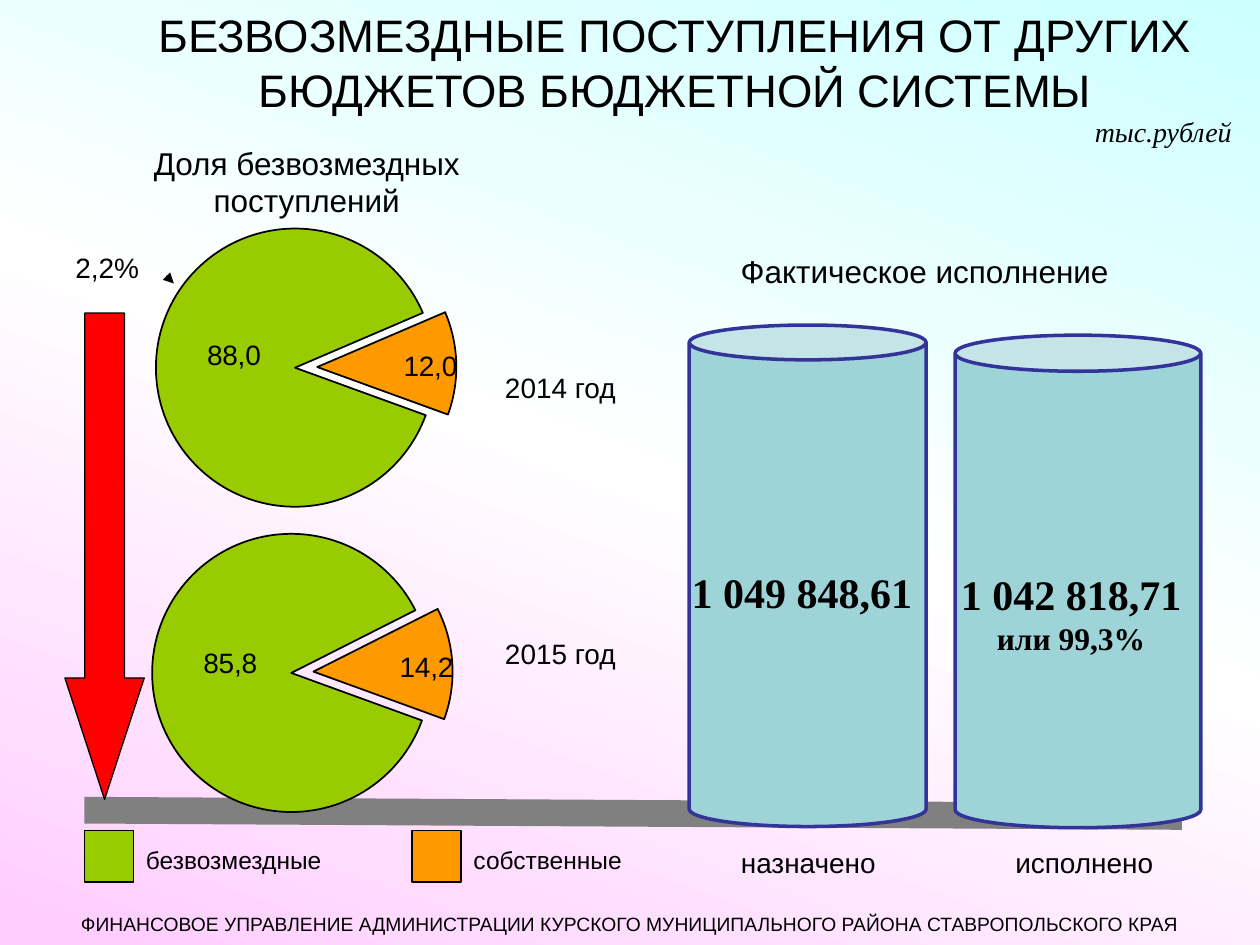
from copy import deepcopy

from lxml import etree
from pptx import Presentation
from pptx.chart.data import CategoryChartData
from pptx.dml.color import RGBColor
from pptx.enum.chart import XL_CHART_TYPE, XL_LABEL_POSITION
from pptx.enum.shapes import MSO_CONNECTOR, MSO_SHAPE
from pptx.enum.text import MSO_ANCHOR, PP_ALIGN
from pptx.oxml import parse_xml
from pptx.oxml.ns import nsdecls, qn
from pptx.util import Inches, Pt

BLACK = RGBColor(0x00, 0x00, 0x00)
GRAY = RGBColor(0x80, 0x80, 0x80)
GREEN = RGBColor(0x99, 0xCC, 0x00)
ORANGE = RGBColor(0xFF, 0x99, 0x00)
RED = RGBColor(0xFF, 0x00, 0x00)
TEAL = RGBColor(0x9E, 0xD3, 0xD7)
NAVY = RGBColor(0x33, 0x33, 0x99)
CYAN = RGBColor(0xCC, 0xFF, 0xFF)
WHITE = RGBColor(0xFF, 0xFF, 0xFF)
PINK = RGBColor(0xFF, 0xCC, 0xFF)

SANS, SERIF = "Arial", "Times New Roman"
LEFT, CENTER = PP_ALIGN.LEFT, PP_ALIGN.CENTER
TOP, MIDDLE = MSO_ANCHOR.TOP, MSO_ANCHOR.MIDDLE
CAN, RECT, ARROW = MSO_SHAPE.CAN, MSO_SHAPE.RECTANGLE, MSO_SHAPE.RIGHT_ARROW
STRAIGHT = MSO_CONNECTOR.STRAIGHT
PIE = XL_CHART_TYPE.PIE
LABEL_SPOTS = (XL_LABEL_POSITION.CENTER, XL_LABEL_POSITION.INSIDE_END)
LABEL_SHIFTS = ((0.02, -0.04), (0.02, 0.01))

PIE_LAYOUT = (
    f'<c:layout {nsdecls("c")}><c:manualLayout><c:layoutTarget val="inner"/>'
    '<c:xMode val="edge"/><c:yMode val="edge"/><c:x val="0.16"/><c:y val="0"/>'
    '<c:w val="0.71"/><c:h val="0.87"/></c:manualLayout></c:layout>'
)


def add_run(p, text, size=16, font=SANS, bold=False, italic=False):
    r = p.add_run()
    r.text = text
    f = r.font
    f.size, f.name, f.bold, f.italic = Pt(size), font, bold, italic
    f.color.rgb = BLACK


def label_layout(dx, dy):
    """Offset of a data label from its spot, as a share of the chart."""
    return parse_xml(f'<c:layout {nsdecls("c")}><c:manualLayout><c:x val="{dx}"/>'
                     f'<c:y val="{dy}"/></c:manualLayout></c:layout>')


class SlideBuilder:
    def __init__(self, slide):
        self.slide = slide

    def background(self, colors, angle):
        """Fill the background with evenly spaced gradient stops."""
        fill = self.slide.background.fill
        fill.gradient()
        fill.gradient_angle = angle
        stops = next(self.slide.element.iter(qn("a:gsLst")))
        stops.insert(1, deepcopy(stops[0]))
        for i, (stop, color) in enumerate(zip(fill.gradient_stops, colors)):
            stop.position = i / (len(colors) - 1)
            stop.color.rgb = color

    def text(self, text, x, y, w, h, align=LEFT, anchor=TOP, extra=None, **fmt):
        """Add a text box; extra is a (text, size) run that follows."""
        box = self.slide.shapes.add_textbox(Inches(x), Inches(y), Inches(w), Inches(h))
        tf = box.text_frame
        tf.word_wrap = True
        tf.vertical_anchor = anchor
        p = tf.paragraphs[0]
        p.alignment = align
        add_run(p, text, **fmt)
        if extra:
            add_run(p, extra[0], **{**fmt, "size": extra[1]})

    def shape(self, kind, x, y, w, h, fill, line=BLACK, weight=0.75, adj=(), rotation=0):
        sp = self.slide.shapes.add_shape(kind, Inches(x), Inches(y), Inches(w), Inches(h))
        sp.shadow.inherit = False
        sp.fill.solid()
        sp.fill.fore_color.rgb = fill
        sp.line.color.rgb = line
        sp.line.width = Pt(weight)
        sp.rotation = rotation
        for i, value in enumerate(adj):
            sp.adjustments[i] = value

    def line(self, x1, y1, x2, y2, color, weight, arrow=False):
        c = self.slide.shapes.add_connector(
            STRAIGHT, Inches(x1), Inches(y1), Inches(x2), Inches(y2))
        c.line.color.rgb = color
        c.line.width = Pt(weight)
        if arrow:
            etree.SubElement(c.line._get_or_add_ln(), qn("a:tailEnd"), type="triangle")
        etree.SubElement(c._element.spPr, qn("a:effectLst"))

    def pie(self, x, y, values, labels):
        data = CategoryChartData()
        data.categories = ["1", "2"]
        data.add_series("Series 1", values)
        chart = self.slide.shapes.add_chart(
            PIE, Inches(x), Inches(y), Inches(3.36), Inches(2.75), data).chart
        chart.has_legend = False
        chart.has_title = False
        chart.font.size, chart.font.name = Pt(9), SANS
        chart.font.color.rgb = BLACK

        plot = chart.plots[0]
        plot.vary_by_categories = True
        plot_area = next(chart.element.iter(qn("c:plotArea")))
        for old in plot_area.findall(qn("c:layout")):
            plot_area.remove(old)
        plot_area.insert(0, parse_xml(PIE_LAYOUT))
        pie = plot_area.find(qn("c:pieChart"))
        for old in pie.findall(qn("c:firstSliceAng")):
            pie.remove(old)
        etree.SubElement(pie, qn("c:firstSliceAng"), val="110")

        series = plot.series[0]
        for i, color in enumerate((GREEN, ORANGE)):
            point = series.points[i]
            point.format.fill.solid()
            point.format.fill.fore_color.rgb = color
            point.format.line.color.rgb = BLACK
            point.format.line.width = Pt(1)
            label = point.data_label
            add_run(label.text_frame.paragraphs[0], labels[i])
            label.position = LABEL_SPOTS[i]
        for d_lbl, shift in zip(series._element.iter(qn("c:dLbl")), LABEL_SHIFTS):
            d_lbl.find(qn("c:idx")).addnext(label_layout(*shift))
        explosion = etree.Element(qn("c:explosion"), val="8")
        series._element.find(qn("c:dPt")).addprevious(explosion)


def main():
    prs = Presentation()
    prs.slide_width, prs.slide_height = Inches(10), Inches(7.5)
    s = SlideBuilder(prs.slides.add_slide(prs.slide_layouts[6]))
    s.background((CYAN, WHITE, PINK), 250)

    s.line(0.67, 6.43, 9.38, 6.48, GRAY, 15.25)
    for x, y, w, h in ((7.58, 2.66, 1.95, 3.91), (5.47, 2.58, 1.88, 3.98)):
        s.shape(CAN, x, y, w, h, TEAL, NAVY, 2, adj=(0.147,))
    s.line(1.32, 2.19, 1.38, 2.25, BLACK, 0.75, arrow=True)

    s.text("назначено", 5.47, 6.66, 1.89, 0.37, CENTER)
    s.text("исполнено", 7.6, 6.66, 2.01, 0.37, CENTER)
    s.text("Фактическое исполнение", 5.78, 1.95, 3.7, 0.43, size=18)
    s.text("1 042 818,71 ", 7.44, 4.46, 2.12, 0.81, CENTER,
           extra=("или 99,3%", 18), size=24, font=SERIF, bold=True)
    s.text("1 049 848,61", 5.39, 4.45, 1.95, 0.5, size=24, font=SERIF, bold=True)

    s.text("Доля безвозмездных поступлений", 0.78, 1.09, 3.31, 0.71, CENTER, size=18)
    for year, y in (("2014 год", 2.89), ("2015 год", 5)):
        s.text(year, 3.91, y, 1.1, 0.37)
    s.text("2,2%", 0.3, 1.94, 1.1, 0.37, CENTER)

    for name, color, x in (("безвозмездные", GREEN, 0.67), ("собственные", ORANGE, 3.27)):
        s.shape(RECT, x, 6.59, 0.39, 0.41, color)
        s.text(name, x + 0.39, 6.66, 1.8, 0.33, size=14)
    s.shape(ARROW, -1.1, 4.1, 3.86, 0.63, RED, adj=(0.5, 1.53), rotation=90)

    s.text("БЕЗВОЗМЕЗДНЫЕ ПОСТУПЛЕНИЯ ОТ ДРУГИХ БЮДЖЕТОВ БЮДЖЕТНОЙ СИСТЕМЫ",
           1.02, 0, 8.68, 0.98, CENTER, MIDDLE, size=26)
    s.text("ФИНАНСОВОЕ УПРАВЛЕНИЕ АДМИНИСТРАЦИИ КУРСКОГО МУНИЦИПАЛЬНОГО РАЙОНА "
           "СТАВРОПОЛЬСКОГО КРАЯ", 0, 7.19, 10, 0.29, CENTER, size=11)
    s.pie(0.67, 4.14, (87, 13), ("85,8", "14,2"))
    s.pie(0.7, 1.72, (88, 12), ("88,0", "12,0"))
    s.text("тыс.рублей", 8.59, 0.86, 1.41, 0.37, font=SERIF, italic=True)

    prs.save("out.pptx")


if __name__ == "__main__":
    main()
